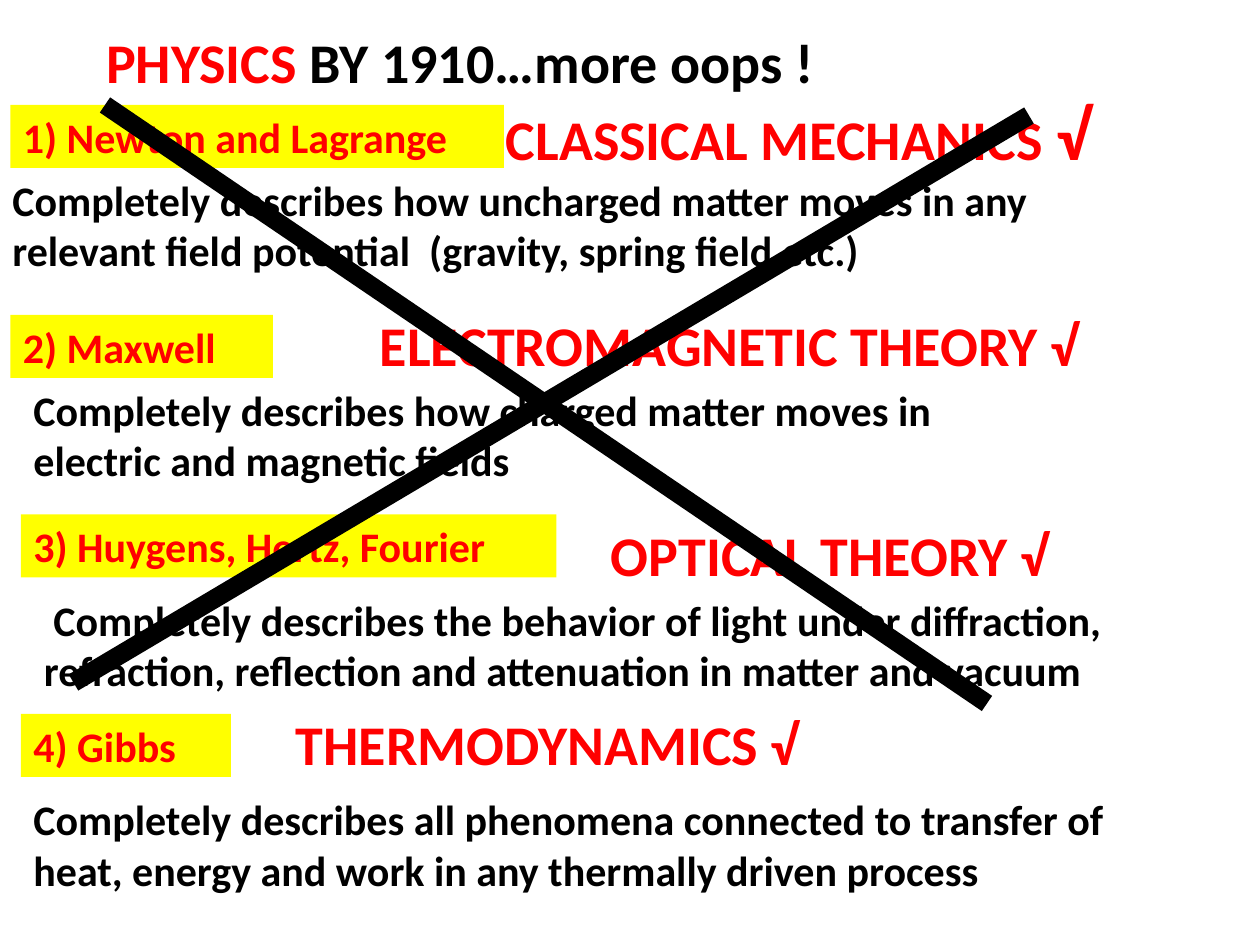
from lxml.etree import SubElement
from pptx import Presentation
from pptx.dml.color import RGBColor
from pptx.enum.shapes import MSO_CONNECTOR, MSO_SHAPE
from pptx.enum.text import MSO_ANCHOR, MSO_AUTO_SIZE, PP_ALIGN
from pptx.oxml.ns import qn
from pptx.util import Inches, Pt

RED = RGBColor(0xFF, 0x00, 0x00)
BLACK = RGBColor(0x00, 0x00, 0x00)
YELLOW = RGBColor(0xFF, 0xFF, 0x00)
FONT = "Calibri"
CELL = Inches(10) / 120  # the page is a grid of 120 columns by 90 rows
LABEL_ROWS, HEADING_ROWS, BODY_ROWS = 6, 7.7, 10.9

# Section top row, then (text, column, width) for label and body,
# and (text, column, width, row offset, tick size) for the heading
SECTIONS = [
    (10, ("1) Newton and Lagrange", 1, 47),
     ("CLASSICAL MECHANICS ", 47, 73, -2, 40),
     ("Completely describes how uncharged matter moves in any  "
      "relevant field potential  (gravity, spring field etc.)", 0, 113, 6)),
    (30, ("2) Maxwell", 1, 25),
     ("ELECTROMAGNETIC THEORY ", 35, 78, -1, 32),
     ("Completely describes how charged matter moves in "
      "electric and magnetic fields", 2, 100, 6)),
    (49, ("3) Huygens, Hertz, Fourier", 2, 51),
     ("OPTICAL THEORY ", 57, 50, 0, 32),
     (" Completely describes the behavior of light under diffraction, "
      "refraction, reflection and attenuation in matter and vacuum", 3, 115, 7)),
    (68, ("4) Gibbs", 2, 20),
     ("THERMODYNAMICS ", 27, 64, -1, 32),
     ("Completely describes all phenomena connected to transfer of "
      "heat, energy and work in any thermally driven process", 2, 105, 7)),
]


def grid(*cells):
    return [round(cell * CELL) for cell in cells]


def write(shape, spans):
    """Fill a shape with one left-aligned paragraph of (text, size, colour) spans."""
    frame = shape.text_frame
    frame.word_wrap = True
    frame.auto_size = MSO_AUTO_SIZE.NONE
    frame.vertical_anchor = MSO_ANCHOR.TOP
    para = frame.paragraphs[0]
    para.alignment = PP_ALIGN.LEFT
    para.font.name = FONT
    para.font.bold = True
    for text, size, color in spans:
        span = para.add_run()
        span.text = text
        span.font.size = Pt(size)
        span.font.color.rgb = color


def add_title(page, column, row, width, height):
    title = page.shapes.title
    title.left, title.top, title.width, title.height = grid(column, row, width, height)
    write(title, [(" ", 24, BLACK), ("PHYSICS", 32, RED),
                  (" BY 1910…more oops !", 32, BLACK)])


def add_section(page, top, label, heading, body):
    text, column, width = label
    box = page.shapes.add_shape(MSO_SHAPE.RECTANGLE, *grid(column, top, width, LABEL_ROWS))
    box.shadow.inherit = False
    box.fill.solid()
    box.fill.fore_color.rgb = YELLOW
    box.line.fill.background()
    write(box, [(text, 24, RED)])

    text, column, width, offset = body
    box = page.shapes.add_textbox(*grid(column, top + offset, width, BODY_ROWS))
    write(box, [(text, 24, BLACK)])

    text, column, width, offset, tick_size = heading
    height = HEADING_ROWS * tick_size / 32
    box = page.shapes.add_textbox(*grid(column, top + offset, width, height))
    write(box, [(text, 32, RED), ("√", tick_size, RED)])


def add_cross(page):
    """Strike out the sections with two thick diagonals."""
    for ends, weight in (((98, 11, 7, 65), 10.75), ((10, 10, 94, 67), 10.5)):
        stroke = page.shapes.add_connector(MSO_CONNECTOR.STRAIGHT, *grid(*ends))
        stroke.line.color.rgb = BLACK
        stroke.line.width = Pt(weight)
        SubElement(stroke._element.spPr, qn("a:effectLst"))


def main():
    deck = Presentation()
    deck.slide_width, deck.slide_height = Inches(10), Inches(7.5)
    page = deck.slides.add_slide(deck.slide_layouts[5])
    add_title(page, 8, 2, 103, HEADING_ROWS)
    for section in SECTIONS:
        add_section(page, *section)
    add_cross(page)
    deck.save("out.pptx")


if __name__ == "__main__":
    main()
